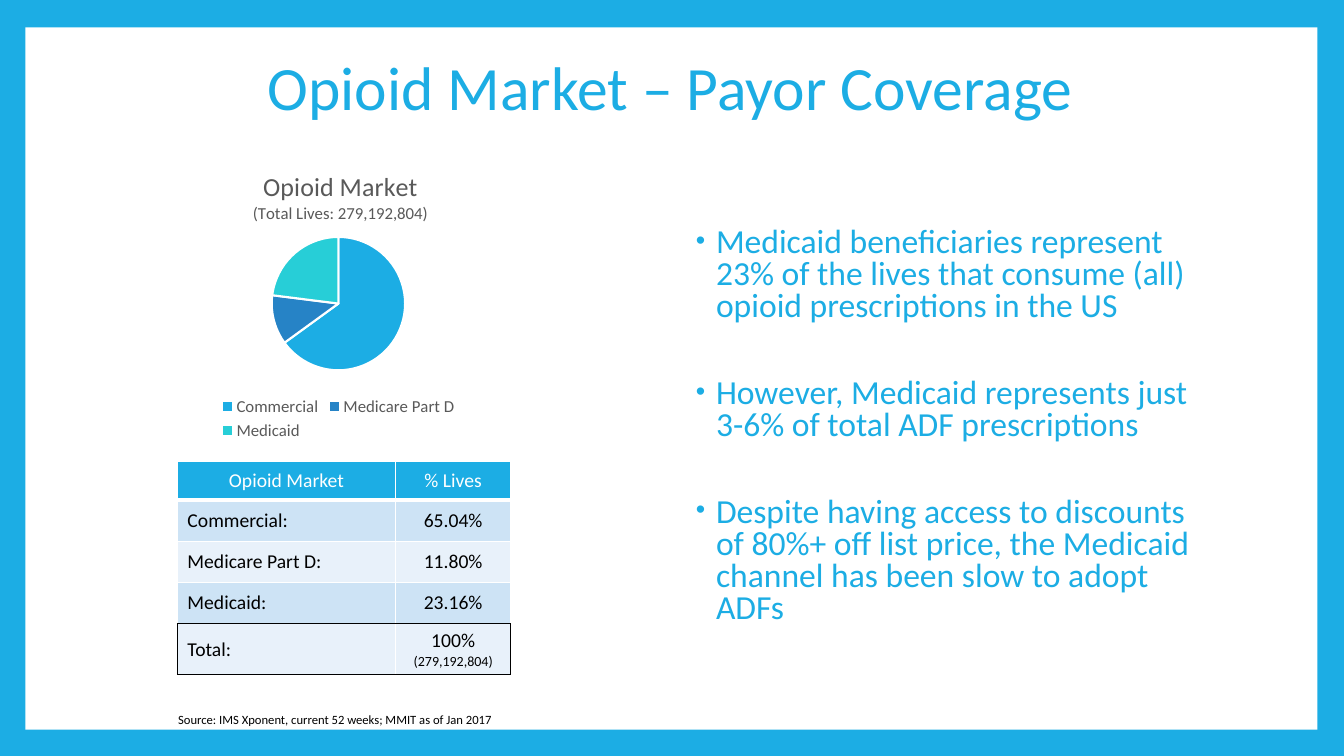
from dataclasses import dataclass

from lxml import etree
from pptx import Presentation
from pptx.chart.data import CategoryChartData
from pptx.dml.color import RGBColor
from pptx.enum.chart import XL_CHART_TYPE, XL_LEGEND_POSITION
from pptx.enum.shapes import MSO_SHAPE
from pptx.enum.text import MSO_ANCHOR, MSO_AUTO_SIZE, PP_ALIGN
from pptx.oxml import parse_xml
from pptx.oxml.ns import nsdecls, qn
from pptx.util import Cm, Pt

LEFT, CENTER = PP_ALIGN.LEFT, PP_ALIGN.CENTER
MIDDLE, TOP = MSO_ANCHOR.MIDDLE, MSO_ANCHOR.TOP
NO_AUTOFIT = MSO_AUTO_SIZE.NONE
PIE, LEGEND_BOTTOM = XL_CHART_TYPE.PIE, XL_LEGEND_POSITION.BOTTOM
RECTANGLE = MSO_SHAPE.RECTANGLE


@dataclass(frozen=True)
class Theme:
    font: str = "Calibri"
    accent: str = "1CADE4"
    slices: tuple = ("1CADE4", "2683C6", "27CED7")
    bands: tuple = ("CDE3F5", "E8F1FA")
    white: str = "FFFFFF"
    black: str = "000000"
    gray: str = "595959"
    title_size: float = 44
    body_size: float = 24
    chart_title_size: float = 18.6
    table_size: float = 14
    label_size: float = 12
    detail_size: float = 10
    source_size: float = 9


theme = Theme()


def style_font(font, size, color):
    font.name = theme.font
    font.size = Pt(size)
    font.bold = False
    font.color.rgb = RGBColor.from_string(color)


def set_chart_layout(parent, index, **fractions):
    for old_layout in parent.findall(qn("c:layout")):
        parent.remove(old_layout)
    layout = parse_xml(f"<c:layout {nsdecls('c')}><c:manualLayout/></c:layout>")
    for name, value in fractions.items():
        etree.SubElement(layout[0], qn(f"c:{name}")).set("val", str(value))
    parent.insert(index, layout)


presentation = Presentation()
presentation.slide_width = Cm(33.87)
presentation.slide_height = Cm(19.05)
slide = presentation.slides.add_slide(presentation.slide_layouts[1])
shapes = slide.shapes

# Blue frame around a white panel
slide.background.fill.solid()
slide.background.fill.fore_color.rgb = RGBColor.from_string(theme.accent)
panel = shapes.add_shape(RECTANGLE, Cm(0.64), Cm(0.69), Cm(32.56), Cm(17.7))
panel.shadow.inherit = False
panel.fill.solid()
panel.fill.fore_color.rgb = RGBColor.from_string(theme.white)
panel.line.fill.background()
shapes.title.element.addprevious(panel.element)

# Title
title = shapes.title
title.left, title.top, title.width, title.height = Cm(3.18), Cm(0.41), Cm(27.43), Cm(3.76)
title.text_frame.auto_size = NO_AUTOFIT
title.text_frame.vertical_anchor = MIDDLE
paragraph = title.text_frame.paragraphs[0]
paragraph.alignment = CENTER
paragraph.line_spacing = 0.9
run = paragraph.add_run()
run.text = "Opioid Market – Payor Coverage"
style_font(run.font, theme.title_size, theme.accent)

# Bulleted findings
findings = [
    "Medicaid beneficiaries represent 23% of the lives that consume (all) "
    "opioid prescriptions in the US",
    "However, Medicaid represents just 3-6% of total ADF prescriptions",
    "Despite having access to discounts of 80%+ off list price, the Medicaid "
    "channel has been slow to adopt ADFs",
]
body = slide.placeholders[1]
body.left, body.top, body.width, body.height = Cm(17.15), Cm(5.61), Cm(13.21), Cm(11.18)
body.text_frame.auto_size = NO_AUTOFIT
body.text_frame.vertical_anchor = TOP
body.text_frame.word_wrap = True
for index, finding in enumerate(findings):
    paragraph = body.text_frame.add_paragraph() if index else body.text_frame.paragraphs[0]
    paragraph.alignment = LEFT
    paragraph.line_spacing = 0.8
    paragraph.space_before = Pt(38.7 if index else 0)
    properties = paragraph._p.get_or_add_pPr()
    properties.set("marL", str(Cm(0.64)))
    properties.set("indent", str(-Cm(0.51)))
    bullet_color = etree.SubElement(properties, qn("a:buClr"))
    etree.SubElement(bullet_color, qn("a:srgbClr")).set("val", theme.accent)
    etree.SubElement(properties, qn("a:buSzPct")).set("val", "80000")
    etree.SubElement(properties, qn("a:buChar")).set("char", "•")
    run = paragraph.add_run()
    run.text = finding
    style_font(run.font, theme.body_size, theme.accent)

# Pie chart
chart_data = CategoryChartData()
chart_data.categories = ["Commercial", "Medicare Part D", "Medicaid"]
chart_data.add_series("Series 1", (65, 12, 23))
chart = shapes.add_chart(PIE, Cm(3.45), Cm(3.73), Cm(10.16), Cm(7.47), chart_data).chart
style_font(chart.font, theme.detail_size, theme.black)
chart.plots[0].vary_by_categories = True
for index, color in enumerate(theme.slices):
    point = chart.plots[0].series[0].points[index]
    point.format.fill.solid()
    point.format.fill.fore_color.rgb = RGBColor.from_string(color)
    point.format.line.color.rgb = RGBColor.from_string(theme.white)
    point.format.line.width = Pt(1.5)

chart.has_legend = True
chart.legend.position = LEGEND_BOTTOM
chart.legend.include_in_layout = False
style_font(chart.legend.font, theme.label_size, theme.gray)

chart.has_title = True
title_frame = chart.chart_title.text_frame
title_lines = [
    ("Opioid Market", theme.chart_title_size),
    ("(Total Lives: 279,192,804)", theme.label_size),
]
for index, (text, size) in enumerate(title_lines):
    paragraph = title_frame.add_paragraph() if index else title_frame.paragraphs[0]
    paragraph.alignment = CENTER
    run = paragraph.add_run()
    run.text = text
    style_font(run.font, size, theme.gray)
set_chart_layout(chart.chart_title._element, 1, xMode="edge", yMode="edge", x=0.28, y=0.06)
plot_area = chart._chartSpace.chart.plotArea
set_chart_layout(plot_area, 0, layoutTarget="inner", xMode="edge", yMode="edge",
                 x=0.33, y=0.3, w=0.34, h=0.45)

# Coverage table: each cell is a list of text runs
rows = [
    (["Opioid Market"], ["% Lives"]),
    (["Commercial:"], ["65.04%"]),
    (["Medicare Part D:"], ["11.80%"]),
    (["Medicaid:"], ["23.16%"]),
    (["Total:"], ["100% ", "(279,192,804)"]),
]
last = len(rows) - 1
table = shapes.add_table(len(rows), 2, Cm(4.47), Cm(11.63), Cm(8.4), Cm(5.13)).table
table.columns[0].width, table.columns[1].width = Cm(5.5), Cm(2.9)
for row_index, row in enumerate(rows):
    is_header, is_total = row_index == 0, row_index == last
    table.rows[row_index].height = Cm(0.97 if is_header else 1.04)
    for column_index, texts in enumerate(row):
        cell = table.cell(row_index, column_index)
        cell.vertical_anchor = MIDDLE
        cell.fill.solid()
        fill = theme.accent if is_header else theme.bands[(row_index - 1) % 2]
        cell.fill.fore_color.rgb = RGBColor.from_string(fill)
        paragraph = cell.text_frame.paragraphs[0]
        paragraph.alignment = CENTER if is_header or column_index else LEFT
        for run_index, text in enumerate(texts):
            run = paragraph.add_run()
            run.text = text
            style_font(run.font, theme.detail_size if run_index else theme.table_size,
                       theme.white if is_header else theme.black)

        # White grid with a black outline around the total row
        black_sides = {
            "L": is_total and column_index == 0,
            "R": is_total and column_index == 1,
            "T": is_total,
            "B": row_index >= last - 1,
        }
        cell_properties = cell._tc.get_or_add_tcPr()
        for position, (side, is_black) in enumerate(black_sides.items()):
            width = Pt(3 if is_header and side == "B" else 1)
            color = theme.black if is_black else theme.white
            cell_properties.insert(position, parse_xml(
                f'<a:ln{side} {nsdecls("a")} w="{width}"><a:solidFill>'
                f'<a:srgbClr val="{color}"/></a:solidFill></a:ln{side}>'))

# Source line
source = shapes.add_textbox(Cm(4.24), Cm(17.81), Cm(19.23), Cm(0.64))
source.text_frame.word_wrap = True
run = source.text_frame.paragraphs[0].add_run()
run.text = "Source: IMS Xponent, current 52 weeks; MMIT as of Jan 2017"
style_font(run.font, theme.source_size, theme.black)

presentation.save("out.pptx")
